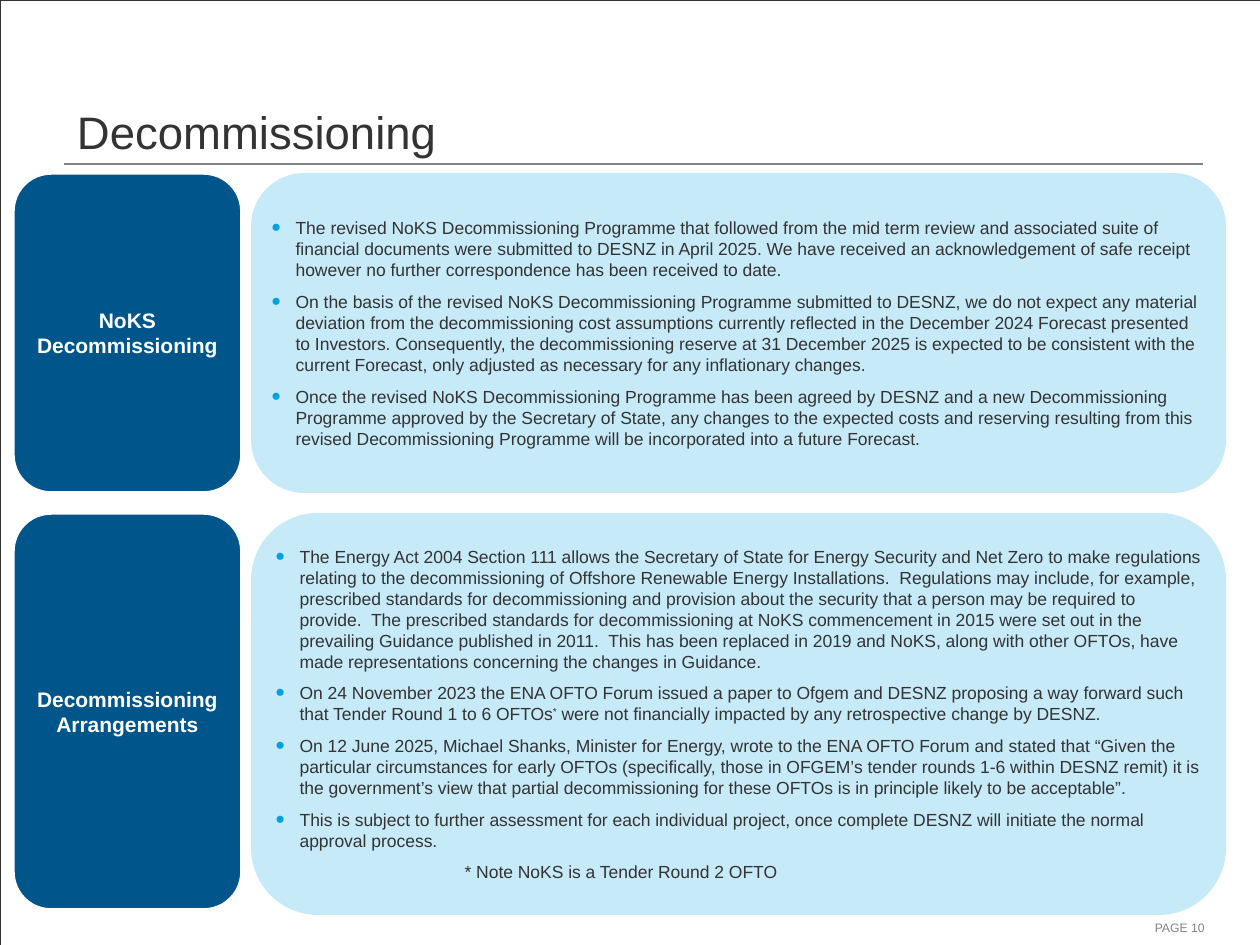
from lxml import etree
from pptx import Presentation
from pptx import util as u
from pptx.dml.color import RGBColor
from pptx.enum import shapes, text
from pptx.oxml import ns

COLORS = {
    "ink": "333333",
    "grey": "828386",
    "navy": "00558A",
    "pale": "C7EAF8",
    "bullet": "00A1E0",
    "white": "FFFFFF",
}
FONT = "Arial"
SCALE = 914400 / 126
LABEL_X, LABEL_W = 13, 229
PANEL_X, PANEL_W = 251, 975

SECTIONS = [
    {
        "label": "NoKS Decommissioning",
        "top": 173, "label_h": 320, "panel_h": 320,
        "points": [
            ["The revised NoKS Decommissioning Programme that followed from the mid term review and associated suite of financial documents were submitted to DESNZ in April 2025. We have received an acknowledgement of safe receipt however no further correspondence has been received to date."],
            ["On the basis of the revised NoKS Decommissioning Programme submitted to DESNZ, we do not expect any material deviation from the decommissioning cost assumptions currently reflected in the December 2024 Forecast presented to Investors. Consequently, the decommissioning reserve at 31 December 2025 is expected to be consistent with the current Forecast, only adjusted as necessary for any inflationary changes."],
            ["Once the revised NoKS Decommissioning Programme has been agreed by DESNZ and a new Decommissioning Programme approved by the Secretary of State, any changes to the expected costs and reserving resulting from this revised Decommissioning Programme will be incorporated into a future Forecast."],
        ],
        "note": None,
    },
    {
        "label": "Decommissioning Arrangements",
        "top": 513, "label_h": 397, "panel_h": 402,
        "points": [
            ["The Energy Act 2004 Section 111 allows the Secretary of State for Energy Security and Net Zero to make regulations relating to the decommissioning of Offshore Renewable Energy Installations.  Regulations may include, for example, prescribed standards for decommissioning and provision about the security that a person may be required to provide.  The prescribed standards for decommissioning at NoKS commencement in 2015 were set out in the prevailing Guidance published in 2011.  This has been replaced in 2019 and NoKS, along with other OFTOs, have made representations concerning the changes in Guidance."],
            ["On 24 November 2023 the ENA OFTO Forum issued a paper to Ofgem and DESNZ proposing a way forward such that Tender Round 1 to 6 OFTOs", "*", " were not financially impacted by any retrospective change by DESNZ."],
            ["On 12 June 2025, Michael Shanks, Minister for Energy, wrote to the ENA OFTO Forum and stated that “Given the particular circumstances for early OFTOs (specifically, those in OFGEM’s tender rounds 1-6 within DESNZ remit) it is the government’s view that partial decommissioning for these OFTOs is in principle likely to be acceptable”."],
            ["This is subject to further assessment for each individual project, once complete DESNZ will initiate the normal approval process."],
        ],
        "note": "* Note NoKS is a Tender Round 2 OFTO",
    },
]


def px(n):
    return u.Emu(round(n * SCALE))


def rgb(name):
    return RGBColor.from_string(COLORS[name])


def add_run(p, words, size=10, color="ink", bold=False, raised=False):
    r = p.add_run()
    r.text = words
    r.font.name = FONT
    r.font.size = u.Pt(size)
    r.font.bold = bold
    r.font.color.rgb = rgb(color)
    if raised:
        r.font._element.set("baseline", "30000")
    return r


def add_bullet(p):
    pPr = p._p.get_or_add_pPr()
    pPr.set("marL", str(px(24)))
    pPr.set("indent", str(-px(24)))
    colour = etree.SubElement(pPr, ns.qn("a:buClr"))
    etree.SubElement(colour, ns.qn("a:srgbClr"), val=COLORS["bullet"])
    etree.SubElement(pPr, ns.qn("a:buSzPct"), val="150000")
    etree.SubElement(pPr, ns.qn("a:buFont"), typeface=FONT)
    etree.SubElement(pPr, ns.qn("a:buChar"), char="•")


def set_insets(tf, left, other):
    tf.margin_left = px(left)
    tf.margin_top = tf.margin_right = tf.margin_bottom = px(other)


class Deck:
    def __init__(self, prs):
        self.s = prs.slides.add_slide(prs.slide_layouts[5])

    def title(self, words, x, y, w, h):
        sp = self.s.shapes.title
        sp.left, sp.top, sp.width, sp.height = map(px, (x, y, w, h))
        tf = sp.text_frame
        tf.auto_size = text.MSO_AUTO_SIZE.NONE
        tf.vertical_anchor = text.MSO_ANCHOR.BOTTOM
        set_insets(tf, 13, 5)
        p = tf.paragraphs[0]
        p.alignment = text.PP_ALIGN.LEFT
        p.line_spacing = 0.9
        add_run(p, words, size=26)

    def box(self, x, y, w, h, kind="ROUNDED_RECTANGLE", fill=None, line=None, weight=1):
        sp = self.s.shapes.add_shape(shapes.MSO_SHAPE[kind], *map(px, (x, y, w, h)))
        sp.shadow.inherit = False
        if fill:
            sp.fill.solid()
            sp.fill.fore_color.rgb = rgb(fill)
        else:
            sp.fill.background()
        if line:
            sp.line.color.rgb = rgb(line)
            sp.line.width = u.Pt(weight)
        else:
            sp.line.fill.background()
        sp.text_frame.word_wrap = True
        sp.text_frame.vertical_anchor = text.MSO_ANCHOR.MIDDLE
        return sp

    def label(self, words, x, y, w, h):
        sp = self.box(x, y, w, h, fill="navy", line="white", weight=2)
        p = sp.text_frame.paragraphs[0]
        p.alignment = text.PP_ALIGN.CENTER
        add_run(p, words, size=12, color="white", bold=True)

    def panel(self, points, note, x, y, w, h):
        tf = self.box(x, y, w, h, fill="pale").text_frame
        set_insets(tf, 5, 5)
        for i, parts in enumerate(points):
            p = tf.add_paragraph() if i else tf.paragraphs[0]
            p.alignment = text.PP_ALIGN.LEFT
            p.space_after = u.Pt(6)
            add_bullet(p)
            for part in parts:
                add_run(p, part, raised=part == "*")
        if note:
            p = tf.add_paragraph()
            p.level = 3
            p.alignment = text.PP_ALIGN.LEFT
            p.space_after = u.Pt(6)
            p._p.get_or_add_pPr().set("marL", str(px(189)))
            p._p.get_or_add_pPr().set("indent", "0")
            add_run(p, note)

    def rule(self, x1, x2, y):
        c = self.s.shapes.add_connector(shapes.MSO_CONNECTOR.STRAIGHT, px(x1), px(y), px(x2), px(y))
        c.line.color.rgb = rgb("grey")
        c.line.width = u.Pt(0.75)
        etree.SubElement(c._element.spPr, ns.qn("a:effectLst"))

    def page_number(self, words, x, y, w, h):
        tf = self.s.shapes.add_textbox(*map(px, (x, y, w, h))).text_frame
        tf.word_wrap = True
        p = tf.paragraphs[0]
        p.alignment = text.PP_ALIGN.RIGHT
        add_run(p, words, size=7, color="grey")


def main():
    prs = Presentation()
    prs.slide_width, prs.slide_height = px(1260), px(945)
    deck = Deck(prs)
    deck.page_number("PAGE 10", 1048, 914, 169, 28)
    deck.box(0, 0, 1260, 945, kind="RECTANGLE", line="ink", weight=0.25)
    deck.rule(64, 1203, 164)
    deck.title("Decommissioning", 64, 30, 843, 134)
    for section in SECTIONS:
        top = section["top"]
        deck.panel(section["points"], section["note"], PANEL_X, top, PANEL_W, section["panel_h"])
        deck.label(section["label"], LABEL_X, top, LABEL_W, section["label_h"])
    prs.save("out.pptx")


if __name__ == "__main__":
    main()
